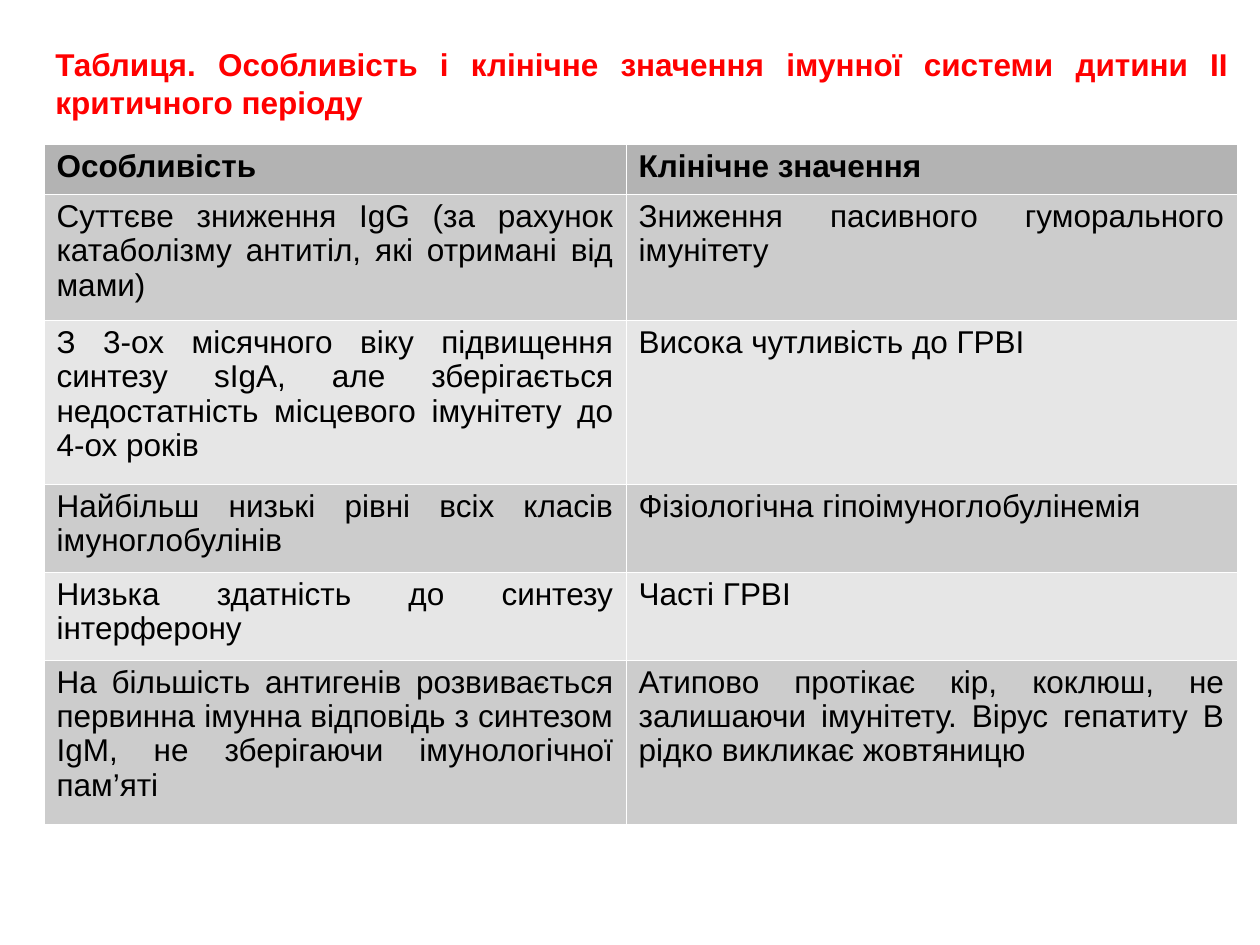
from lxml import etree
from pptx import Presentation
from pptx.dml.color import RGBColor
from pptx.enum import text
from pptx.oxml.ns import qn
from pptx.util import Emu, Pt

PX = 914400 // 126
COLORS = {"title": "FF0000", "ink": "000000", "head": "B3B3B3",
          "odd": "CCCCCC", "even": "E6E6E6", "rule": "FFFFFF"}
TITLE = "Таблиця. Особливість і клінічне значення імунної системи дитини ІІ критичного періоду"
ROWS = [
    ("Особливість", "Клінічне значення"),
    ("Суттєве зниження IgG (за рахунок катаболізму антитіл, які отримані від мами)",
     "Зниження пасивного гуморального імунітету"),
    ("З 3-ох місячного віку підвищення синтезу sIgА, але зберігається недостатність місцевого імунітету до 4-ох років",
     "Висока чутливість до ГРВІ"),
    ("Найбільш низькі рівні всіх класів імуноглобулінів",
     "Фізіологічна гіпоімуноглобулінемія"),
    ("Низька здатність до синтезу інтерферону", "Часті ГРВІ"),
    ("На більшість антигенів розвивається первинна імунна відповідь з синтезом IgМ, не зберігаючи імунологічної пам’яті",
     "Атипово протікає кір, коклюш, не залишаючи імунітету. Вірус гепатиту В рідко викликає жовтяницю"),
]
COL_WIDTHS = [582, 611]
ROW_HEIGHTS = [50, 126, 164, 88, 88, 164]


def px(n):
    return Emu(n * PX)


def rgb(name):
    return RGBColor.from_string(COLORS[name])


def write(tf, content, color, bold, spacing):
    p = tf.paragraphs[0]
    p.alignment = text.PP_ALIGN.JUSTIFY
    p.line_spacing = spacing
    r = p.add_run()
    r.text = content
    r.font.name = "Arial"
    r.font.size = Pt(18)
    r.font.bold = bold
    r.font.color.rgb = rgb(color)


def set_borders(cell):
    tc_pr = cell._tc.get_or_add_tcPr()
    for i, side in enumerate(("lnL", "lnR", "lnT", "lnB")):
        ln = etree.Element(qn(f"a:{side}"), w="762")
        fill = etree.SubElement(ln, qn("a:solidFill"))
        etree.SubElement(fill, qn("a:srgbClr"), val=COLORS["rule"])
        tc_pr.insert(i, ln)


def add_title(slide, x, y, w, h):
    tf = slide.shapes.add_textbox(px(x), px(y), px(w), px(h)).text_frame
    tf.word_wrap = True
    write(tf, TITLE, "title", True, Pt(21.6))


def add_features_table(slide, x, y):
    table = slide.shapes.add_table(
        len(ROWS), len(COL_WIDTHS), px(x), px(y),
        px(sum(COL_WIDTHS)), px(sum(ROW_HEIGHTS))).table
    for col, width in zip(table.columns, COL_WIDTHS):
        col.width = px(width)
    for i, (row, height, values) in enumerate(zip(table.rows, ROW_HEIGHTS, ROWS)):
        row.height = px(height)
        band = "head" if i == 0 else "odd" if i % 2 else "even"
        for cell, value in zip(row.cells, values):
            cell.fill.solid()
            cell.fill.fore_color.rgb = rgb(band)
            set_borders(cell)
            write(cell.text_frame, value, "ink", i == 0, 0.97)


def main():
    prs = Presentation()
    prs.slide_width, prs.slide_height = px(1260), px(945)
    slide = prs.slides.add_slide(prs.slide_layouts[6])
    add_title(slide, 43, 39, 1198, 88)
    add_features_table(slide, 44, 144)
    prs.save("out.pptx")


if __name__ == "__main__":
    main()
